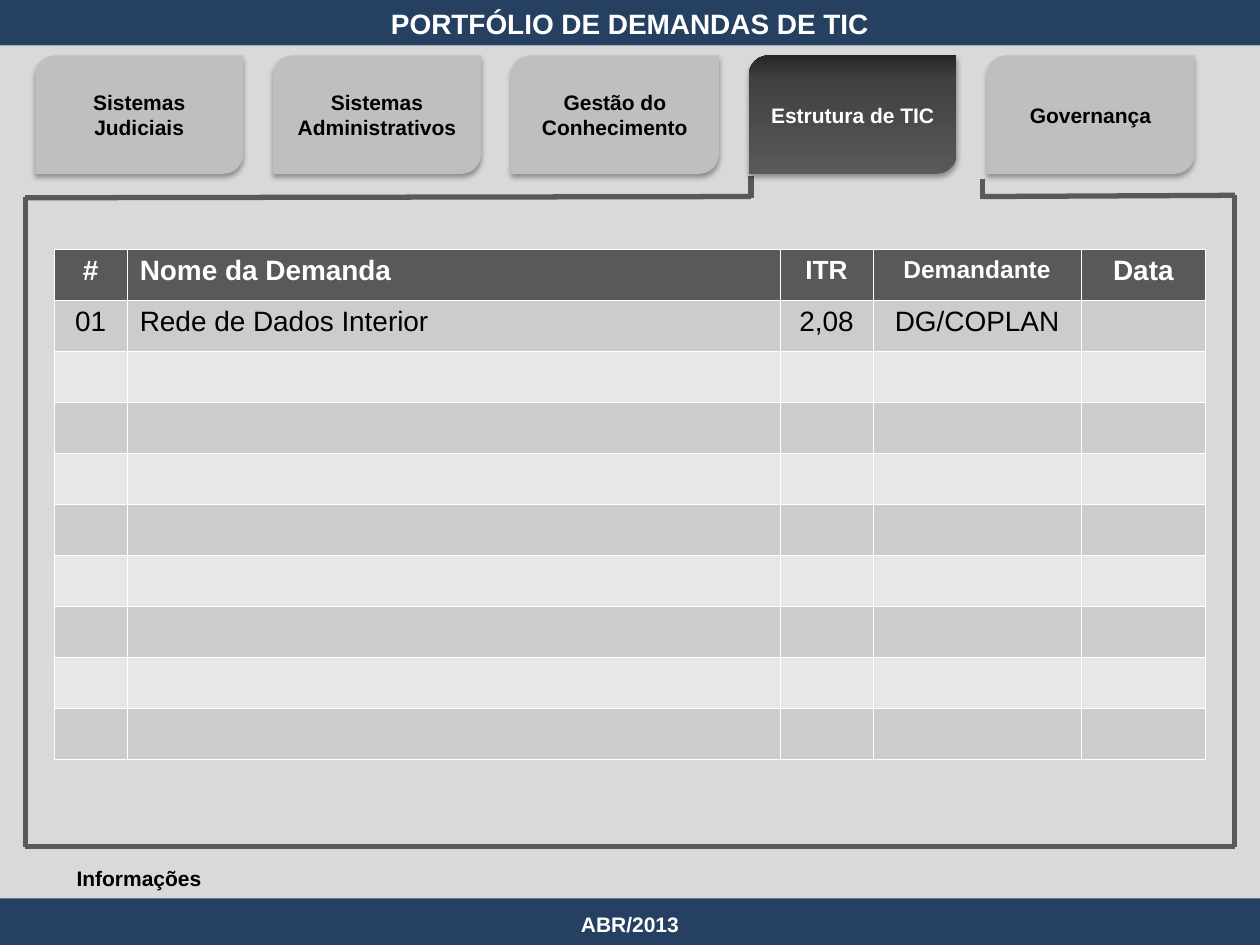
"""Build the IT demand portfolio slide with tabs, a panel and a demand table."""
from pptx import Presentation
from pptx import oxml
from pptx.dml.color import RGBColor
from pptx.enum import shapes, text
from pptx.oxml import ns
from pptx.util import Inches, Pt

COLORS = {
    "white": "FFFFFF", "black": "000000", "navy": "254061", "backdrop": "D9D9D9",
    "tab": "BFBFBF", "dark": "595959", "band": "CCCCCC", "light": "E7E7E7",
    "shade": "404040", "deep": "262626",
}
CENTER, LEFT = text.PP_ALIGN.CENTER, text.PP_ALIGN.LEFT


def color(name):
    return RGBColor.from_string(COLORS[name])


def write(frame, words, size, ink, align=CENTER, bold=True):
    frame.text = words
    para = frame.paragraphs[0]
    para.alignment = align
    for span in para.runs:
        span.font.name = "Arial"
        span.font.size = Pt(size)
        span.font.bold = bold
        span.font.color.rgb = color(ink)


deck = Presentation()
deck.slide_width, deck.slide_height = Inches(10), Inches(7.5)
page = deck.slides.add_slide(deck.slide_layouts[6])

for top, height, fill in [(0.36, 6.85, "backdrop"), (7.13, 0.37, "navy"), (-0.01, 0.37, "navy")]:
    band = page.shapes.add_shape(
        shapes.MSO_SHAPE.RECTANGLE, Inches(0), Inches(top), Inches(10), Inches(height))
    band.shadow.inherit = False
    band.fill.solid()
    band.fill.fore_color.rgb = color(fill)
    band.line.fill.background()

captions = [
    ("ABR/2013", 0, 7.14, 10, 0.39, 12, "white", CENTER, text.MSO_ANCHOR.MIDDLE),
    ("PORTFÓLIO DE DEMANDAS DE TIC", 0, 0, 10, 0.37, 16, "white", CENTER, text.MSO_ANCHOR.TOP),
    ("Informações", 0.51, 6.82, 1.26, 0.3, 12, "black", LEFT, text.MSO_ANCHOR.TOP),
]
for words, left, top, width, height, size, ink, align, anchor in captions:
    box = page.shapes.add_textbox(Inches(left), Inches(top), Inches(width), Inches(height))
    box.text_frame.word_wrap = True
    box.text_frame.vertical_anchor = anchor
    write(box.text_frame, words, size, ink, align)

panel_lines = [
    (0.2, 1.56, 0.2, 6.72), (0.2, 6.72, 9.8, 6.72), (9.8, 6.72, 9.8, 1.55),
    (9.8, 1.55, 7.8, 1.56), (7.8, 1.58, 7.8, 1.42),
    (5.96, 1.56, 0.2, 1.57), (5.96, 1.57, 5.96, 1.4),
]
for ends in panel_lines:
    edge = page.shapes.add_connector(
        shapes.MSO_CONNECTOR.STRAIGHT, *[Inches(value) for value in ends])
    edge.line.color.rgb = color("dark")
    edge.line.width = Pt(3)
    oxml.parse_xml(f'<a:effectLst {ns.nsdecls("a")}/>')
    edge._element.spPr.append(oxml.parse_xml(f'<a:effectLst {ns.nsdecls("a")}/>'))

tabs = ["Sistemas Judiciais", "Sistemas Administrativos", "Gestão do Conhecimento",
        "Estrutura de TIC", "Governança"]
active_tab = "Estrutura de TIC"
tab_step = (7.83 - 0.28) / (len(tabs) - 1)
stops = "".join(
    f'<a:gs pos="{place * 1000}"><a:srgbClr val="{COLORS[name]}"/></a:gs>'
    for place, name in [(0, "dark"), (80, "shade"), (100, "deep")])
gradient = (f'<a:gradFill {ns.nsdecls("a")} rotWithShape="1"><a:gsLst>{stops}</a:gsLst>'
            '<a:lin ang="16200000" scaled="0"/></a:gradFill>')
shadow = (f'<a:outerShdw {ns.nsdecls("a")} blurRad="{Pt(3.1)}" dist="{Pt(1.8)}" dir="5400000" '
          f'rotWithShape="0"><a:srgbClr val="{COLORS["black"]}"><a:alpha val="35000"/>'
          '</a:srgbClr></a:outerShdw>')
for index, words in enumerate(tabs):
    tab = page.shapes.add_shape(
        shapes.MSO_SHAPE.ROUND_2_DIAG_RECTANGLE,
        Inches(0.28 + index * tab_step), Inches(0.44), Inches(1.65), Inches(0.94))
    tab.shadow.inherit = False
    properties = tab._element.spPr
    properties.find(ns.qn("a:effectLst")).append(oxml.parse_xml(shadow))
    if words == active_tab:
        properties.find(ns.qn("a:prstGeom")).addnext(oxml.parse_xml(gradient))
    else:
        tab.fill.solid()
        tab.fill.fore_color.rgb = color("tab")
    tab.line.fill.background()
    tab.text_frame.word_wrap = True
    tab.text_frame.vertical_anchor = text.MSO_ANCHOR.MIDDLE
    write(tab.text_frame, words, 12, "white" if words == active_tab else "black")

headers = ["#", "Nome da Demanda", "ITR", "Demandante", "Data"]
header_sizes = [16, 16, 15, 14, 16]
demand = ["01", "Rede de Dados Interior", "2,08", "DG/COPLAN", ""]
widths = [0.58, 5.18, 0.74, 1.65, 0.99]
row_count = 10
table = page.shapes.add_table(
    row_count, len(widths), Inches(0.43), Inches(1.98), Inches(9.13), Inches(4.05)).table
table.first_row = table.horz_banding = False
for column, width in zip(table.columns, widths):
    column.width = Inches(width)

for row in range(row_count):
    for col in range(len(widths)):
        cell = table.cell(row, col)
        cell_properties = cell._tc.get_or_add_tcPr()
        for side in ("lnL", "lnR", "lnT", "lnB"):
            cell_properties.append(oxml.parse_xml(
                f'<a:{side} {ns.nsdecls("a")} w="{Pt(0.5)}"><a:solidFill>'
                f'<a:srgbClr val="{COLORS["white"]}"/></a:solidFill></a:{side}>'))
        cell.fill.solid()
        cell.fill.fore_color.rgb = color("dark" if row == 0 else "band" if row % 2 else "light")
        align = LEFT if col == 1 else CENTER
        if row == 0:
            write(cell.text_frame, headers[col], header_sizes[col], "white", align)
            if col < 2:
                indent = cell.text_frame.paragraphs[0]._p.get_or_add_pPr()
                indent.set("marL", str(Inches(0.31)))
                indent.set("indent", str(-Inches(0.31)))
        elif row == 1 and demand[col]:
            write(cell.text_frame, demand[col], 16, "black", align, bold=False)

deck.save("out.pptx")
